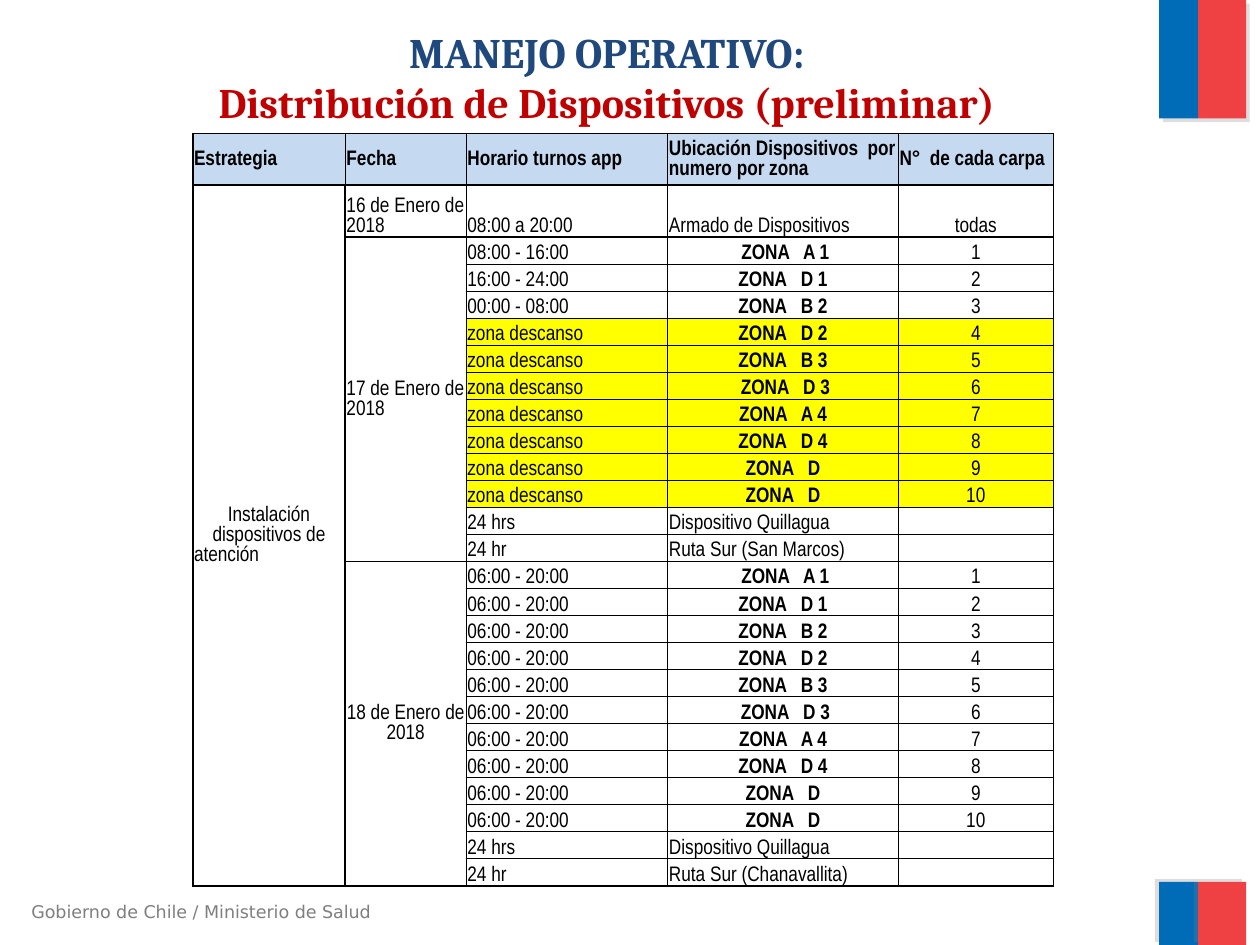
from lxml.etree import SubElement
from pptx import Presentation
from pptx.dml.color import RGBColor
from pptx.enum.shapes import MSO_SHAPE as Shape
from pptx.enum.text import MSO_ANCHOR as Anchor, PP_ALIGN as Align
from pptx.oxml.ns import qn
from pptx.util import Inches, Pt

BLACK = RGBColor(0x00, 0x00, 0x00)
WHITE = RGBColor(0xFF, 0xFF, 0xFF)
FLAG_BLUE = RGBColor(0x00, 0x6C, 0xB7)
FLAG_RED = RGBColor(0xEF, 0x41, 0x44)
SHADOW_GREY = RGBColor(0x80, 0x80, 0x80)
FOOTER_GREY = RGBColor(0x7F, 0x7F, 0x7F)
TITLE_BLUE = RGBColor(0x1F, 0x49, 0x7D)
TITLE_RED = RGBColor(0xC0, 0x00, 0x00)
HEADER_BLUE = RGBColor(0xC5, 0xD9, 0xF1)
REST_YELLOW = RGBColor(0xFF, 0xFF, 0x00)

HEADERS = ["Estrategia", "Fecha", "Horario turnos app",
           "Ubicación Dispositivos  por numero por zona", "N°  de cada carpa"]
ZONES = [" ZONA   A 1", "ZONA   D 1", "ZONA   B 2", "ZONA   D 2", "ZONA   B 3",
         " ZONA   D 3", "ZONA   A 4", "ZONA   D 4", "ZONA   D", "ZONA   D"]
REST = "zona descanso"
SHIFTS_17 = ["08:00 - 16:00", "16:00 - 24:00", "00:00 - 08:00"] + [REST] * 7
SHIFTS_18 = ["06:00 - 20:00"] * 10


def write(frame, text, size=12, font="Arial Narrow", color=BLACK, bold=False,
          align=Align.LEFT, new_paragraph=False):
    """Write one paragraph; an empty text still keeps its font size."""
    paragraph = frame.add_paragraph() if new_paragraph else frame.paragraphs[0]
    paragraph.alignment = align
    if not text:
        SubElement(paragraph._p, qn("a:endParaRPr"), sz=str(size * 100))
        return
    run = paragraph.add_run()
    run.text = text
    run.font.size, run.font.name, run.font.bold = Pt(size), font, bold
    run.font.color.rgb = color


def day_rows(shifts, route):
    """Ten zones and the two round-the-clock posts of one day."""
    zones = [(shift, zone, str(number)) for number, (shift, zone)
             in enumerate(zip(shifts, ZONES), start=1)]
    return zones + [("24 hrs", "Dispositivo Quillagua", ""), ("24 hr", route, "")]


class SlideBuilder:
    thin, thick = 0.5, 1
    cell_inset = Inches(0.01)

    def __init__(self, slide):
        self.slide = slide

    def bar(self, left, top, width, height, color, shadow_angle):
        bar = self.slide.shapes.add_shape(
            Shape.RECTANGLE, Inches(left), Inches(top), Inches(width), Inches(height))
        bar.fill.solid()
        bar.fill.fore_color.rgb = color
        bar.line.fill.background()
        bar.shadow.inherit = False
        effects = bar._element.spPr.find(qn("a:effectLst"))
        shadow = SubElement(effects, qn("a:outerShdw"), blurRad="0", dist=str(Pt(3)),
                            dir=str(shadow_angle * 60000), algn="ctr", rotWithShape="0")
        tint = SubElement(shadow, qn("a:srgbClr"), val=str(SHADOW_GREY))
        SubElement(tint, qn("a:alpha"), val="25000")

    def text_box(self, left, top, width, height):
        box = self.slide.shapes.add_textbox(
            Inches(left), Inches(top), Inches(width), Inches(height))
        box.text_frame.word_wrap = True
        return box.text_frame

    def table(self, left, top, widths, heights):
        frame = self.slide.shapes.add_table(
            len(heights), len(widths), Inches(left), Inches(top),
            Inches(sum(widths)), Inches(sum(heights)))
        table = frame.table
        table.first_row = table.horz_banding = False
        for column, width in zip(table.columns, widths):
            column.width = Inches(width)
        for row, height in zip(table.rows, heights):
            row.height = Inches(height)
        return table

    def cell(self, cell, text, fill=WHITE, anchor=Anchor.BOTTOM, borders=(), **style):
        cell.margin_left = cell.margin_right = cell.margin_top = self.cell_inset
        cell.margin_bottom = 0
        cell.vertical_anchor = anchor
        write(cell.text_frame, text, **style)
        properties = cell._tc.get_or_add_tcPr()
        for side in "LRTB":
            weight = self.thick if side in borders else self.thin
            line = SubElement(properties, qn(f"a:ln{side}"), w=str(Pt(weight)))
            ink = SubElement(line, qn("a:solidFill"))
            SubElement(ink, qn("a:srgbClr"), val=str(BLACK))
        cell.fill.solid()
        cell.fill.fore_color.rgb = fill


def main():
    deck = Presentation()
    deck.slide_width, deck.slide_height = Inches(10), Inches(7.5)
    builder = SlideBuilder(deck.slides.add_slide(deck.slide_layouts[6]))

    # Flag bars, top and bottom
    builder.bar(9.2, -0.01, 0.31, 0.95, FLAG_BLUE, 45)
    builder.bar(9.51, 0, 0.38, 0.94, FLAG_RED, 45)
    builder.bar(9.2, 7, 0.31, 0.5, FLAG_BLUE, 215)
    builder.bar(9.51, 7, 0.38, 0.5, FLAG_RED, 215)

    # Footer and title
    write(builder.text_box(0.15, 7.1, 3.02, 0.27),
          "Gobierno de Chile / Ministerio de Salud",
          size=10, font="DejaVu Sans", color=FOOTER_GREY)
    title = builder.text_box(0.35, 0.16, 8.93, 0.89)
    heading = dict(size=24, font="Cambria", bold=True, align=Align.CENTER)
    write(title, "MANEJO OPERATIVO:", color=TITLE_BLUE, **heading)
    write(title, "Distribución de Dispositivos (preliminar)", color=TITLE_RED,
          new_paragraph=True, **heading)

    # Rows of the schedule, grouped by date
    days = [
        ("16 de Enero de 2018", Anchor.BOTTOM, Align.LEFT,
         [("08:00 a 20:00", "Armado de Dispositivos", "todas")]),
        ("17 de Enero de 2018", Anchor.MIDDLE, Align.LEFT,
         day_rows(SHIFTS_17, "Ruta Sur (San Marcos)")),
        ("18 de Enero de 2018", Anchor.MIDDLE, Align.CENTER,
         day_rows(SHIFTS_18, "Ruta Sur (Chanavallita)")),
    ]
    row_count = sum(len(rows) for *_, rows in days)
    tall = 0.41
    small = (5.97 - 2 * tall) / (row_count - 1)
    schedule = builder.table(1.53, 1.06, [1.21, 0.96, 1.6, 1.83, 1.23],
                             [tall] * 2 + [small] * (row_count - 1))

    # Header row
    for column, header in enumerate(HEADERS):
        builder.cell(schedule.cell(0, column), header, fill=HEADER_BLUE, bold=True,
                     anchor=Anchor.MIDDLE, borders="TB" if column else "LTB")

    # Strategy column
    strategy = schedule.cell(1, 0)
    strategy.merge(schedule.cell(row_count, 0))
    builder.cell(strategy, "Instalación dispositivos de", anchor=Anchor.MIDDLE,
                 borders="LRTB", align=Align.CENTER)
    write(strategy.text_frame, "atención", new_paragraph=True)

    # Dates, shifts, places and tents
    first = 1
    for date, anchor, align, rows in days:
        last = first + len(rows) - 1
        date_cell = schedule.cell(first, 1)
        if last > first:
            date_cell.merge(schedule.cell(last, 1))
        builder.cell(date_cell, date, anchor=anchor, align=align, borders="LTB")
        for row, (shift, place, tent) in enumerate(rows, start=first):
            borders = "T" * (row == first) + "B" * (row == last)
            is_zone = "ZONA" in place
            look = dict(fill=REST_YELLOW if shift == REST else WHITE, borders=borders)
            builder.cell(schedule.cell(row, 2), shift, **look)
            builder.cell(schedule.cell(row, 3), place, bold=is_zone,
                         align=Align.CENTER if is_zone else Align.LEFT, **look)
            builder.cell(schedule.cell(row, 4), tent, align=Align.CENTER, **look)
        first = last + 1

    deck.save("out.pptx")


if __name__ == "__main__":
    main()
